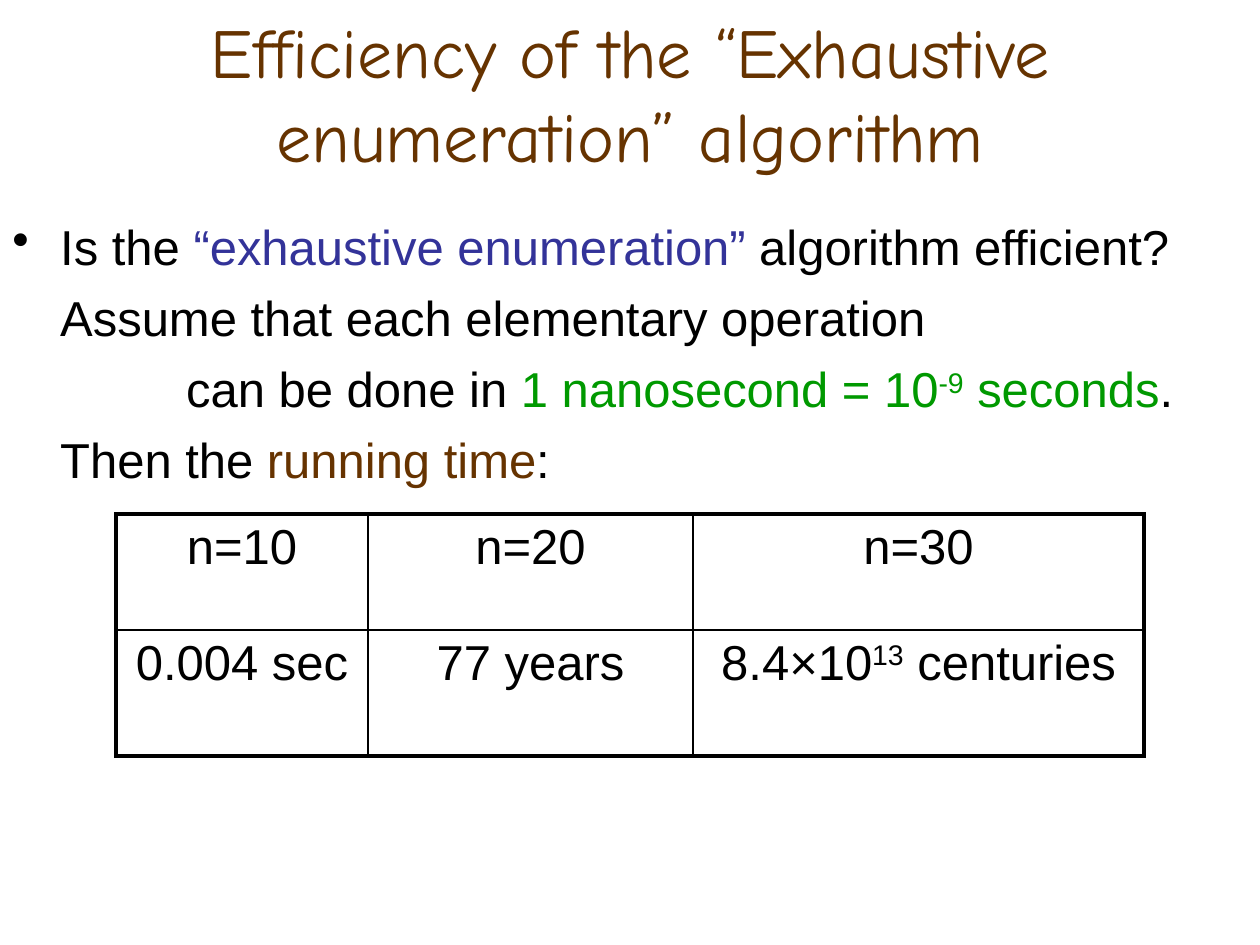
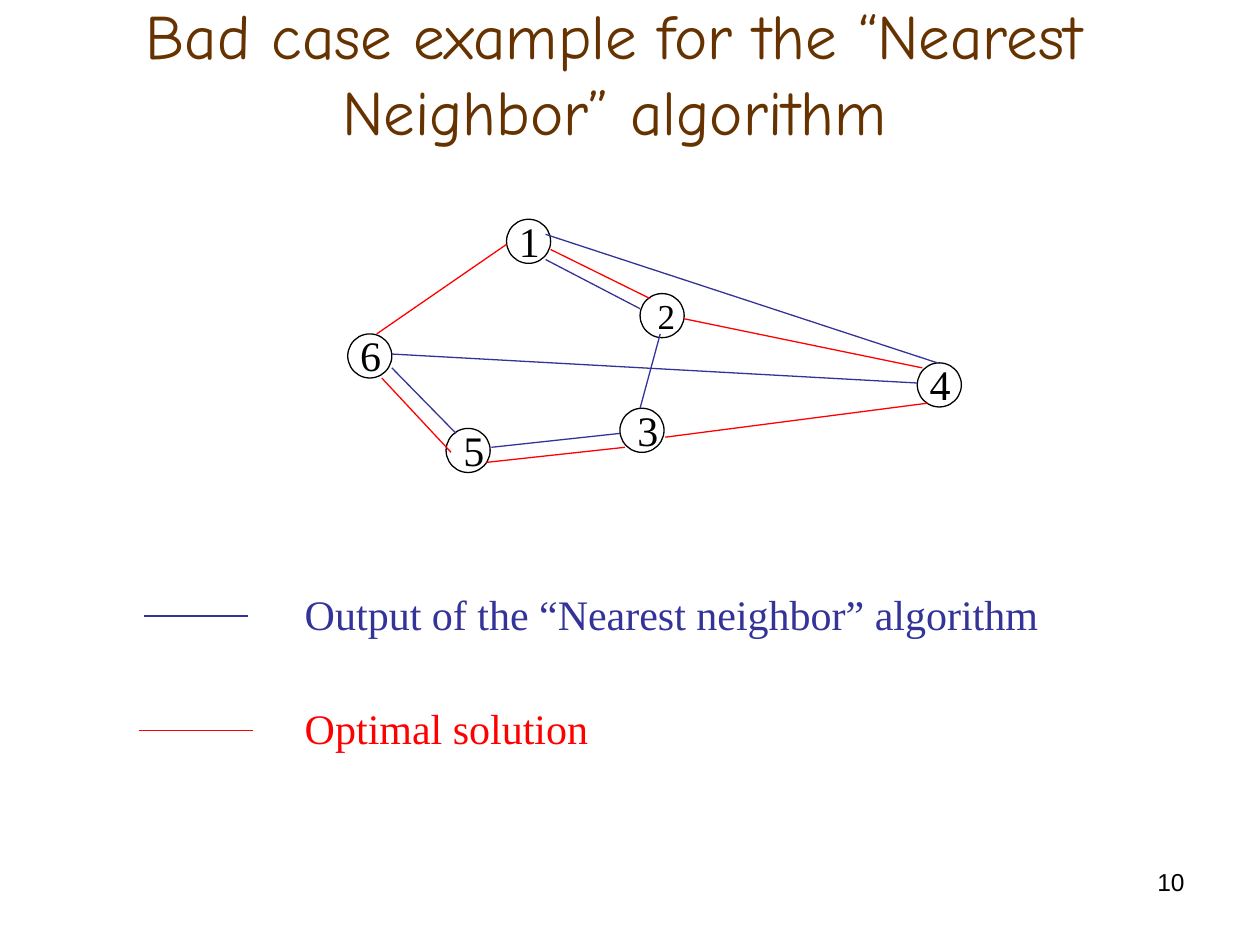
"""Build two slides on the running time and quality of tour algorithms."""
from lxml import etree
from pptx import Presentation
from pptx.dml.color import RGBColor
from pptx.enum.shapes import MSO_CONNECTOR, MSO_SHAPE
from pptx.enum.text import MSO_ANCHOR, PP_ALIGN
from pptx.oxml.ns import qn
from pptx.util import Inches, Pt

LEFT, CENTER, RIGHT = PP_ALIGN.LEFT, PP_ALIGN.CENTER, PP_ALIGN.RIGHT
TOP, MIDDLE = MSO_ANCHOR.TOP, MSO_ANCHOR.MIDDLE
OVAL, STRAIGHT = MSO_SHAPE.OVAL, MSO_CONNECTOR.STRAIGHT

BLACK = RGBColor(0x00, 0x00, 0x00)
BROWN = RGBColor(0x66, 0x33, 0x00)
BLUE = RGBColor(0x33, 0x33, 0x99)
GREEN = RGBColor(0x00, 0x99, 0x00)
RED = RGBColor(0xFF, 0x00, 0x00)

SANS, SERIF, COMIC = "Arial", "Times New Roman", "Comic Neue"
THIN, INNER, OUTER = 0.75, 1, 2.25
HANG = 0.38
NODE = 0.35


class Deck:
    def __init__(self):
        self.show = Presentation()
        self.show.slide_width = Inches(10)
        self.show.slide_height = Inches(7.5)
        self.slide = None

    def page(self):
        self.slide = self.show.slides.add_slide(self.show.slide_layouts[6])

    def add_runs(self, para, runs, size, font, align=LEFT):
        para.alignment = align
        for text, color, *raised in runs:
            run = para.add_run()
            run.text = text
            run.font.size = Pt(size)
            run.font.name = font
            run.font.color.rgb = color
            if raised:
                run._r.get_or_add_rPr().set("baseline", "30000")

    def frame(self, box, anchor=TOP):
        frame = self.slide.shapes.add_textbox(*map(Inches, box)).text_frame
        frame.word_wrap = True
        frame.vertical_anchor = anchor
        return frame

    def text(self, box, text, size, font, color=BLACK, align=LEFT, anchor=TOP):
        para = self.frame(box, anchor).paragraphs[0]
        self.add_runs(para, [(text, color)], size, font, align)

    def title(self, box, text, size):
        self.text(box, text, size, COMIC, BROWN, CENTER, MIDDLE)

    def body(self, box, items):
        frame = self.frame(box)
        for i, (left, mark, runs) in enumerate(items):
            para = frame.add_paragraph() if i else frame.paragraphs[0]
            para.space_before = Pt(7)
            self.add_runs(para, runs, 28, SANS)
            props = para._p.get_or_add_pPr()
            props.set("marL", str(Inches(left)))
            if mark:
                props.set("indent", str(-Inches(HANG)))
                etree.SubElement(props, qn("a:buChar")).set("char", mark)

    def border(self, cell, widths):
        props = cell._tc.get_or_add_tcPr()
        for i, (side, width) in enumerate(widths.items()):
            line = etree.Element(qn(f"a:ln{side}"), w=str(Pt(width)))
            fill = etree.SubElement(line, qn("a:solidFill"))
            etree.SubElement(fill, qn("a:srgbClr")).set("val", str(BLACK))
            props.insert(i, line)

    def table(self, box, cols, rows, cells):
        shape = self.slide.shapes.add_table(len(rows), len(cols), *map(Inches, box))
        table = shape.table
        table.first_row = table.horz_banding = False
        for col, width in zip(table.columns, cols):
            col.width = Inches(width)
        for row, height in zip(table.rows, rows):
            row.height = Inches(height)
        for r, line in enumerate(cells):
            for c, runs in enumerate(line):
                cell = table.cell(r, c)
                cell.fill.background()
                self.add_runs(cell.text_frame.paragraphs[0], runs, 28, SANS, CENTER)
                edges = {"L": c == 0, "R": c == len(cols) - 1,
                         "T": r == 0, "B": r == len(rows) - 1}
                self.border(cell, {side: OUTER if edge else INNER
                                   for side, edge in edges.items()})

    def node(self, x, y, name, size, dx, dy):
        shape = self.slide.shapes.add_shape(OVAL, *map(Inches, (x, y, NODE, NODE)))
        shape.shadow.inherit = False
        shape.fill.background()
        shape.line.color.rgb = BLACK
        shape.line.width = Pt(THIN)
        self.text((x + dx, y - dy, 0.28, 0.5), name, size, SERIF)

    def line(self, ends, color):
        line = self.slide.shapes.add_connector(STRAIGHT, *map(Inches, ends))
        line.line.color.rgb = color
        line.line.width = Pt(THIN)
        etree.SubElement(line._element.spPr, qn("a:effectLst"))

    def key(self, ends, text, color):
        self.line(ends, color)
        self.text((2.32, ends[1] - 0.27, 6.38, 0.5), text, 24, SERIF, color)


def timing(deck):
    deck.page()
    deck.title((0, 0.3, 10, 0.87),
               "Efficiency of the “Exhaustive enumeration” algorithm", 40)
    deck.body((0, 1.67, 10, 5.03), [
        (HANG, "•", [("Is the ", BLACK), ("“exhaustive enumeration”", BLUE),
                     (" algorithm efficient?", BLACK)]),
        (HANG, "", [("Assume that each elementary operation", BLACK)]),
        (HANG + 1, "", [("can be done in ", BLACK), ("1 nanosecond = 10", GREEN),
                        ("-9", GREEN, True), (" seconds", GREEN), (".", BLACK)]),
        (HANG, "", [("Then the ", BLACK), ("running time", BROWN), (":", BLACK)]),
    ])
    deck.table((0.92, 4.08, 8.17, 1.92), (2, 2.58, 3.58), (0.92, 1), [
        [[(f"n={n}", BLACK)] for n in (10, 20, 30)],
        [[("0.004 sec", BLACK)], [("77 years", BLACK)],
         [("8.4×10", BLACK), ("13", BLACK, True), (" centuries", BLACK)]],
    ])


def tours(deck):
    deck.page()
    deck.text((7.17, 6.83, 2.33, 0.52), "10", 14, SANS, align=RIGHT)
    deck.title((0, 0, 9.75, 1.15),
               "Bad case example for the “Nearest Neighbor” algorithm", 36)
    nodes = [
        (4.02, 1.74, "1", 24, 0, 0.08),
        (5.08, 2.33, "2", 20, 0.04, 0.04),
        (4.92, 3.24, "3", 24, 0.04, 0.08),
        (7.28, 2.88, "4", 24, 0, 0.08),
        (3.54, 3.4, "5", 24, 0.04, 0.08),
        (2.76, 2.65, "6", 24, 0, 0.08),
    ]
    for node in nodes:
        deck.node(*node)
    routes = {
        BLUE: [(4.33, 2.06, 5.08, 2.45), (5.24, 2.65, 5.08, 3.24),
               (4.92, 3.44, 3.9, 3.55), (3.62, 3.44, 3.11, 2.92),
               (3.11, 2.81, 7.28, 3.04), (7.44, 2.88, 4.33, 1.86)],
        RED: [(4.37, 1.98, 5.16, 2.37), (5.43, 2.53, 7.32, 2.92),
              (7.36, 3.2, 5.28, 3.47), (4.96, 3.55, 3.86, 3.67),
              (3.58, 3.59, 3.03, 3), (2.99, 2.65, 4.02, 1.94)],
    }
    for color, legs in routes.items():
        for leg in legs:
            deck.line(leg, color)
    deck.key((1.14, 4.89, 1.97, 4.89),
             "Output of the “Nearest neighbor” algorithm", BLUE)
    deck.key((1.1, 5.8, 2.01, 5.8), "Optimal solution", RED)


def main():
    deck = Deck()
    timing(deck)
    tours(deck)
    deck.show.save("out.pptx")


if __name__ == "__main__":
    main()
